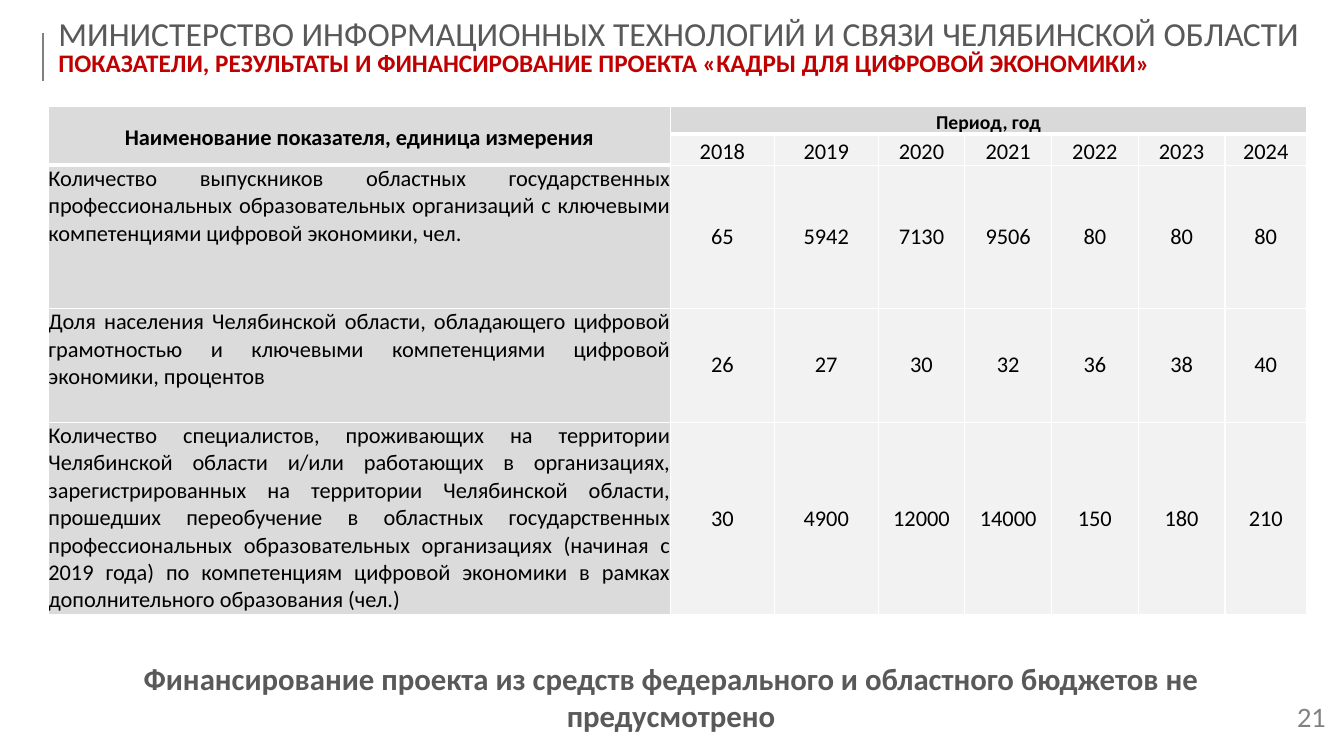
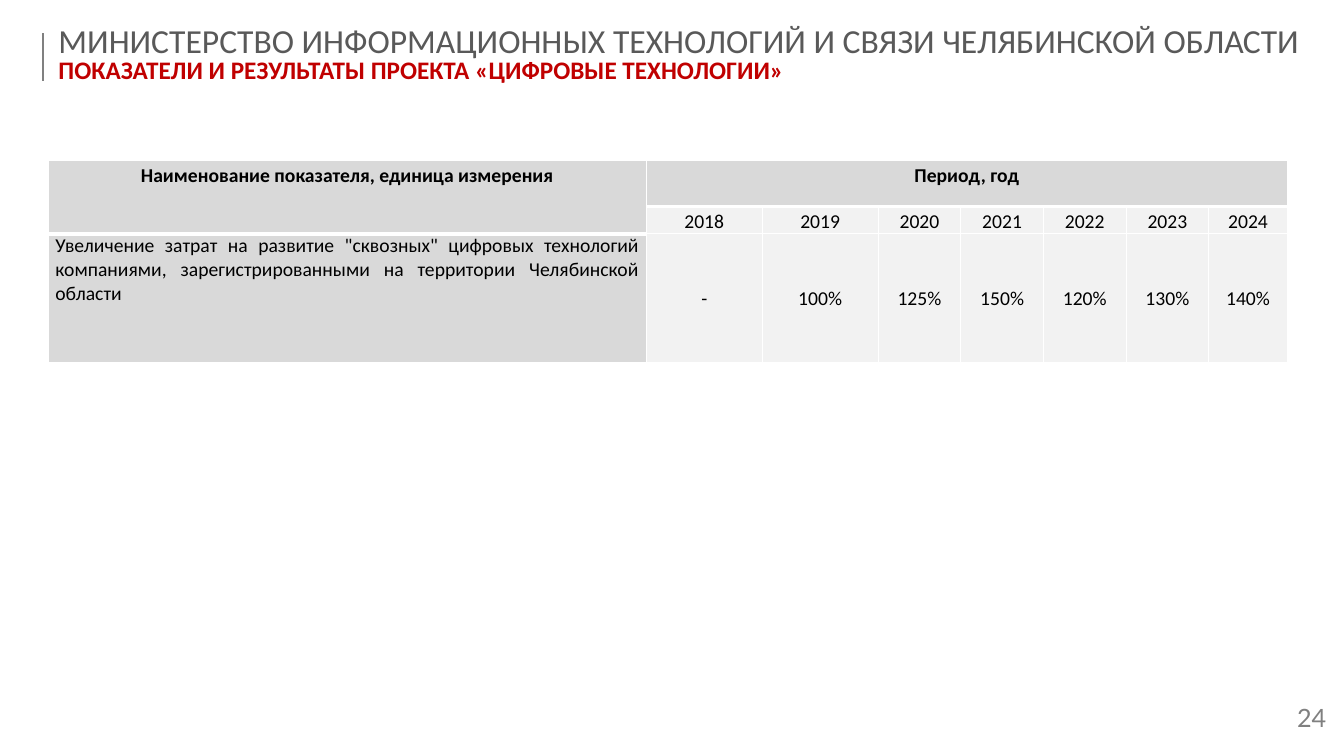
from lxml.etree import SubElement
from pptx import Presentation
from pptx.dml.color import RGBColor
from pptx.enum.shapes import MSO_CONNECTOR
from pptx.enum.text import MSO_ANCHOR, MSO_AUTO_SIZE, PP_ALIGN
from pptx.oxml.ns import qn
from pptx.util import Inches, Pt

BLACK = RGBColor(0x00, 0x00, 0x00)
WHITE = RGBColor(0xFF, 0xFF, 0xFF)
SLATE = RGBColor(0x59, 0x59, 0x59)
GREY = RGBColor(0x80, 0x80, 0x80)
RED = RGBColor(0xC0, 0x00, 0x00)
HEAD = RGBColor(0xD9, 0xD9, 0xD9)
ASH = RGBColor(0xDB, 0xDB, 0xDB)
PALE = RGBColor(0xF2, 0xF2, 0xF2)

OFFICE = "МИНИСТЕРСТВО ИНФОРМАЦИОННЫХ ТЕХНОЛОГИЙ И СВЯЗИ ЧЕЛЯБИНСКОЙ ОБЛАСТИ"
YEARS = [str(year) for year in range(2018, 2025)]
TOP, MID = MSO_ANCHOR.TOP, MSO_ANCHOR.MIDDLE
MAIN = {"name": "Calibri", "size": Pt(24), "bold": False}
SUB = {"name": "Calibri", "size": Pt(18), "bold": True}
PAGE = {"name": "Lato", "size": Pt(18)}
NOTE = {"name": "Calibri", "size": Pt(22), "bold": True}
LEFT = {"alignment": PP_ALIGN.LEFT, "line_spacing": 0.8}
TIGHT = {"alignment": PP_ALIGN.CENTER, "line_spacing": 0.8}
LOOSE = {"alignment": PP_ALIGN.CENTER, "line_spacing": 1.15}
MIDDLE = {"alignment": PP_ALIGN.CENTER}
FULL = {"alignment": PP_ALIGN.JUSTIFY}


def apply(item, form):
    """Set each attribute named in the format on the item."""
    for key, value in form.items():
        setattr(item, key, value)


class Deck:
    """Holds the shared style and the current slide."""

    def __init__(self):
        """Start a wide, empty deck."""
        self.show = Presentation()
        apply(self.show, {"slide_width": Inches(13.33), "slide_height": Inches(7.5)})
        self.slide = None

    def place(self, item, left, top, width, height):
        """Move and size a shape, in inches."""
        names = ("left", "top", "width", "height")
        sizes = map(Inches, (left, top, width, height))
        apply(item, dict(zip(names, sizes)))

    def label(self, para, text, form, color, face):
        """Put one formatted run into a paragraph."""
        apply(para, form)
        run = para.add_run()
        run.text = text
        apply(run.font, face)
        run.font.color.rgb = color

    def start(self, topic, top, page):
        """Add a slide with its title, side rule and page number."""
        self.slide = self.show.slides.add_slide(self.show.slide_layouts[5])
        self.rule(0.43, 0.33, 0.8)
        self.text(str(page), (12.69, 6.9, 0.64, 0.5), TIGHT, GREY, PAGE, MID)
        title = self.slide.shapes.title
        self.place(title, 0.48, top, 12.75, 0.67)
        frame = title.text_frame
        apply(frame, {"word_wrap": True, "auto_size": MSO_AUTO_SIZE.NONE,
                      "vertical_anchor": MID})
        self.label(frame.paragraphs[0], OFFICE, LEFT, SLATE, MAIN)
        self.label(frame.add_paragraph(), topic, LEFT, RED, SUB)

    def rule(self, left, top, end):
        """Draw an upright grey line."""
        line = self.slide.shapes.add_connector(
            MSO_CONNECTOR.STRAIGHT, *map(Inches, (left, top, left, end)))
        line.line.width = Pt(1.5)
        line.line.color.rgb = GREY
        SubElement(line._element.spPr, qn("a:effectLst"))

    def text(self, words, box, form, color, face, anchor=TOP):
        """Add a wrapped text box."""
        frame = self.slide.shapes.add_textbox(*map(Inches, box)).text_frame
        apply(frame, {"word_wrap": True, "vertical_anchor": anchor})
        self.label(frame.paragraphs[0], words, form, color, face)

    def edge(self, cell, side, width):
        """Draw one white cell border."""
        line = SubElement(cell._tc.get_or_add_tcPr(), qn("a:" + side), w=str(Pt(width)))
        fill = SubElement(line, qn("a:solidFill"))
        SubElement(fill, qn("a:srgbClr"), val=str(WHITE))

    def cell(self, cell, row, col, shade):
        """Set the borders and fill of a cell."""
        def below(line):
            return 3 if line == 0 or (line == 1 and col == 0) else 1

        sides = {"lnL": 1, "lnR": 1, "lnT": below(row - 1) if row else 1,
                 "lnB": below(row)}
        for side, width in sides.items():
            self.edge(cell, side, width)
        cell.fill.solid()
        cell.fill.fore_color.rgb = shade if col == 0 else PALE if row else HEAD

    def fill(self, cell, text, form, size, pad, anchor, bold=False):
        """Set the text of a cell."""
        apply(cell, {"margin_left": Inches(pad), "margin_right": Inches(pad),
                     "margin_top": 0, "margin_bottom": 0, "vertical_anchor": anchor})
        face = {"name": "Calibri", "size": Pt(size), "bold": bold}
        self.label(cell.text_frame.paragraphs[0], text, form, BLACK, face)

    def table(self, top, cols, rows, data, size, shade, pad, anchor):
        """Add a table of yearly values under a two-row header."""
        box = (0.48, top, sum(cols), sum(rows))
        table = self.slide.shapes.add_table(
            len(rows), len(cols), *map(Inches, box)).table
        apply(table, {"first_row": False, "horz_banding": False})
        for col, width in zip(table.columns, cols):
            col.width = Inches(width)
        for row, height in zip(table.rows, rows):
            row.height = Inches(height)
        for row in range(len(rows)):
            for col in range(len(cols)):
                self.cell(table.cell(row, col), row, col, shade)
        name, span = table.cell(0, 0), table.cell(0, 1)
        name.merge(table.cell(1, 0))
        span.merge(table.cell(0, len(cols) - 1))
        self.fill(name, "Наименование показателя, единица измерения",
                  LOOSE, size, 0.07, anchor, True)
        self.fill(span, "Период, год", LOOSE, 14, 0.07, TOP, True)
        for col, year in enumerate(YEARS, 1):
            self.fill(table.cell(1, col), year, LOOSE, size, 0.07, TOP)
        for row, (topic, *values) in enumerate(data, 2):
            self.fill(table.cell(row, 0), topic, FULL, size, pad, TOP)
            for col, value in enumerate(values, 1):
                self.fill(table.cell(row, col), value, MIDDLE, size, pad, MID)


STAFF = [
    ("Количество выпускников областных государственных профессиональных "
     "образовательных организаций с ключевыми компетенциями цифровой экономики, чел.",
     "65", "5942", "7130", "9506", "80", "80", "80"),
    ("Доля населения Челябинской области, обладающего цифровой грамотностью и "
     "ключевыми компетенциями цифровой экономики, процентов",
     "26", "27", "30", "32", "36", "38", "40"),
    ("Количество специалистов, проживающих на территории Челябинской области и/или "
     "работающих в организациях, зарегистрированных на территории Челябинской "
     "области, прошедших переобучение в областных государственных профессиональных "
     "образовательных организациях (начиная с 2019 года) по компетенциям цифровой "
     "экономики в рамках дополнительного образования (чел.)",
     "30", "4900", "12000", "14000", "150", "180", "210"),
]
COSTS = [
    ("Увеличение затрат на развитие \"сквозных\" цифровых технологий компаниями, "
     "зарегистрированными на территории Челябинской области",
     "-", "100%", "125%", "150%", "120%", "130%", "140%"),
]


def main():
    """Build and save both slides."""
    deck = Deck()
    deck.start("ПОКАЗАТЕЛИ, РЕЗУЛЬТАТЫ И ФИНАНСИРОВАНИЕ ПРОЕКТА "
               "«КАДРЫ ДЛЯ ЦИФРОВОЙ ЭКОНОМИКИ»", 0.15, 21)
    deck.table(1.06, [6.17] + [1.03] * 2 + [0.86] * 4 + [0.81],
               [0.27, 0.31, 1.42, 1.13, 1.91], STAFF, 16, ASH, 0, MID)
    deck.text("Финансирование проекта из средств федерального и областного "
              "бюджетов не предусмотрено", (0.43, 6.5, 12.45, 0.85),
              MIDDLE, SLATE, NOTE)
    deck.start("ПОКАЗАТЕЛИ И РЕЗУЛЬТАТЫ ПРОЕКТА «ЦИФРОВЫЕ ТЕХНОЛОГИИ»", 0.22, 24)
    deck.table(1.59, [5.93] + [1.15] * 2 + [0.82] * 4 + [0.78],
               [0.46, 0.27, 1.28], COSTS, 14, HEAD, 0.07, TOP)
    deck.show.save("out.pptx")


if __name__ == "__main__":
    main()
